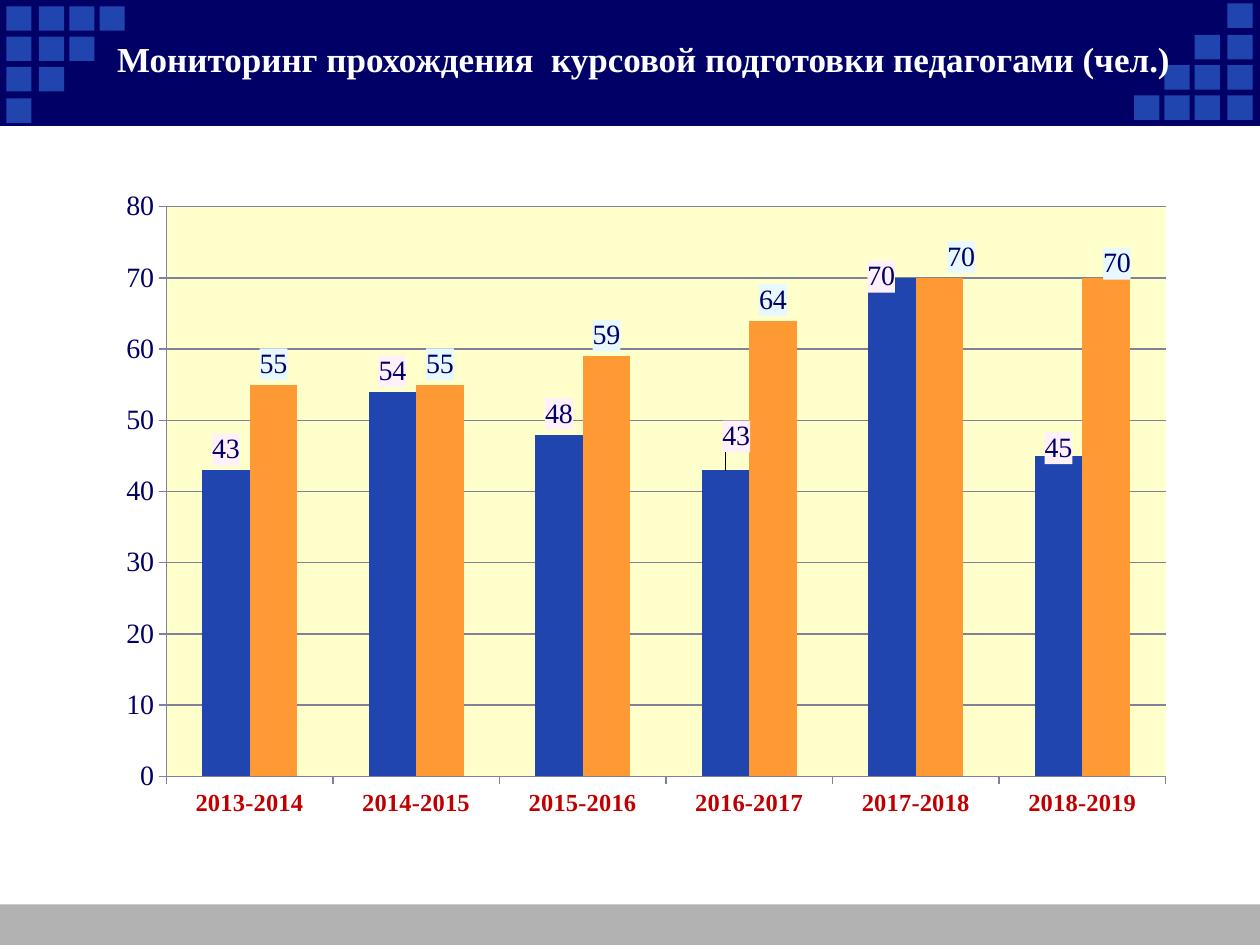
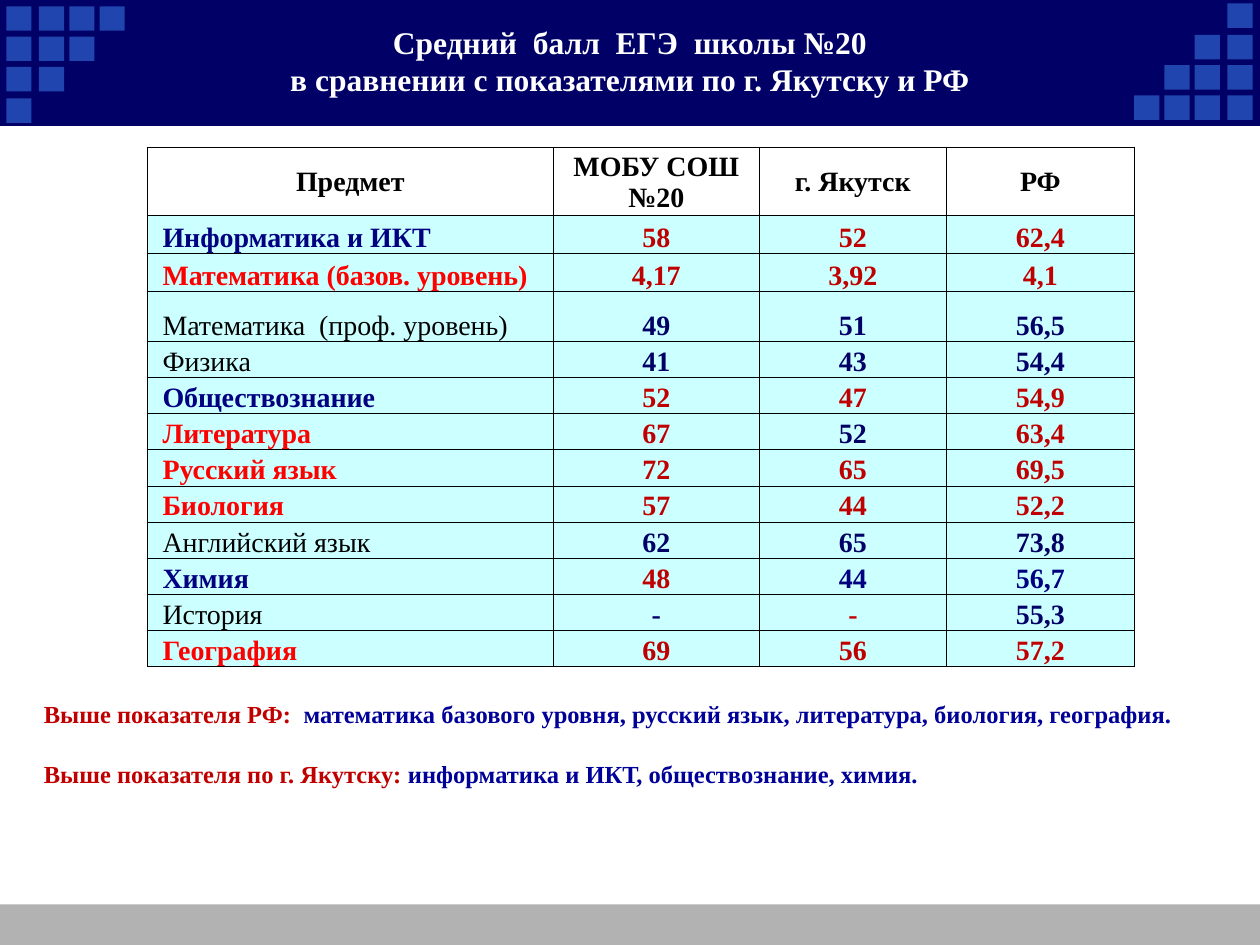
from lxml import etree
from pptx import Presentation
from pptx.chart.data import CategoryChartData
from pptx.dml.color import RGBColor
from pptx.enum import chart as ch, shapes, text
from pptx.oxml import parse_xml
from pptx.oxml.ns import nsdecls, qn
from pptx.util import Pt

NAVY = RGBColor(0x00, 0x00, 0x66)
BLUE = RGBColor(0x20, 0x45, 0xAE)
DARK = RGBColor(0x00, 0x00, 0x80)
INK = RGBColor(0x00, 0x00, 0x99)
GRAY = RGBColor(0xB2, 0xB2, 0xB2)
LINE = RGBColor(0x80, 0x80, 0x99)
WHITE = RGBColor(0xFF, 0xFF, 0xFF)
BLACK = RGBColor(0x00, 0x00, 0x00)
WINE = RGBColor(0xC0, 0x00, 0x00)
RED = RGBColor(0xFF, 0x00, 0x00)
AQUA = RGBColor(0xCC, 0xFF, 0xFF)
CREAM = RGBColor(0xFF, 0xFF, 0xCC)
AMBER = RGBColor(0xFF, 0x99, 0x33)
PINK = RGBColor(0xFF, 0xF0, 0xFA)
SKY = RGBColor(0xE8, 0xF8, 0xFF)


def style(font, size, color=None, bold=True):
    font.name, font.size, font.bold = "Times New Roman", Pt(size), bold
    if color is not None:
        font.color.rgb = color


def add_text(slide, box, lines, size, align, wrap=True):
    """Each line is a list of (words, colour) runs."""
    frame = slide.shapes.add_textbox(*map(Pt, box)).text_frame
    frame.word_wrap = wrap
    for i, line in enumerate(lines):
        para = frame.add_paragraph() if i else frame.paragraphs[0]
        para.alignment = align
        style(para.font, size)
        for words, color in line:
            run = para.add_run()
            run.text = words
            run.font.color.rgb = color
    return frame


prs = Presentation()
prs.slide_width, prs.slide_height = Pt(720), Pt(540)
blank = prs.slide_layouts[6]
LEFT, MID = text.PP_ALIGN.LEFT, text.PP_ALIGN.CENTER

# Shared bands and corner squares, kept on the layout
for holder in list(blank.placeholders):
    holder.element.getparent().remove(holder.element)
first = prs.slides.add_slide(blank)
rects = [(0, 516.8, 720, 23.2, GRAY), (0, 0, 720, 72, NAVY)]
cols, rows = (3.6, 22.3, 39.6, 56.9), (3.6, 20.9, 38.2, 56.2)
for r, y in enumerate(rows):
    for x in cols[:4 - r]:
        rects.append((x, y, 14.4, 14, BLUE))
        rects.append((705 - x, 58.2 - y, 14.4, 14, BLUE))
for *box, color in rects:
    rect = first.shapes.add_shape(shapes.MSO_SHAPE.RECTANGLE, *map(Pt, box))
    rect.shadow.inherit = False
    rect.fill.solid()
    rect.fill.fore_color.rgb = color
    rect.line.fill.background()
for rect in list(first.shapes):
    blank.shapes.element.append(rect.element)

# Slide 1: title and column chart
add_text(first, (59.8, 18, 624, 32),
         [[("Мониторинг прохождения  курсовой подготовки педагогами (чел.)", WHITE)]],
         20, LEFT)
data = CategoryChartData()
data.categories = [f"{year}-{year + 1}" for year in range(2013, 2019)]
data.add_series("Series 1", (43, 54, 48, 43, 70, 45))
data.add_series("Series 2", (55, 55, 59, 64, 70, 70))
chart = first.shapes.add_chart(
    ch.XL_CHART_TYPE.COLUMN_CLUSTERED, Pt(59.8), Pt(102.2), Pt(618), Pt(372), data).chart
chart.has_legend = chart.has_title = False
chart.font.name, chart.font.size, chart.font.color.rgb = "Arial", Pt(18), NAVY

# Axes
years, people = chart.category_axis, chart.value_axis
style(years.tick_labels.font, 14, WINE)
style(people.tick_labels.font, 16, NAVY, False)
people.minimum_scale, people.maximum_scale, people.major_unit = 0, 80, 10
people.has_major_gridlines = True
for axis in (years, people):
    axis.major_tick_mark = ch.XL_TICK_MARK.OUTSIDE
for item in (years, people, people.major_gridlines):
    item.format.line.color.rgb = LINE
    item.format.line.width = Pt(0.75)

# Plot area: fixed place and fill
plot = chart.plots[0]
plot.gap_width, plot.overlap, plot.vary_by_categories = 150, 0, False
area = chart.element.find(".//" + qn("c:plotArea"))
for old in area.findall(qn("c:layout")):
    area.remove(old)
area.insert(0, parse_xml(
    f'<c:layout {nsdecls("c")}><c:manualLayout><c:layoutTarget val="inner"/>'
    '<c:xMode val="edge"/><c:yMode val="edge"/><c:x val="0.057"/><c:y val="0.043"/>'
    '<c:w val="0.924"/><c:h val="0.875"/></c:manualLayout></c:layout>'))
area.append(parse_xml(
    f'<c:spPr {nsdecls("c", "a")}><a:solidFill><a:srgbClr val="{CREAM}"/>'
    '</a:solidFill></c:spPr>'))

# Series and labels; shifts are parts of the chart's width and height
shifts = ({3: (0.01, -0.02), 4: (-0.01, 0.03), 5: (0, 0.02)},
          {4: (0.02, 0), 5: (0.01, 0.01)})
for bars, color, tint, moves in zip(plot.series, (BLUE, AMBER), (PINK, SKY), shifts):
    bars.format.fill.solid()
    bars.format.fill.fore_color.rgb = color
    bars.invert_if_negative = False
    labels = bars.data_labels
    labels.show_value = True
    for label in [labels] + [bars.points[i].data_label for i in moves]:
        label.position = ch.XL_LABEL_POSITION.OUTSIDE_END
        style(label.font, 16, NAVY, False)
    tree = chart.element.findall(".//" + qn("c:ser"))[bars.index].find(qn("c:dLbls"))
    for node in [tree] + tree.findall(qn("c:dLbl")):
        node.find(qn("c:txPr")).addprevious(parse_xml(
            f'<c:spPr {nsdecls("c", "a")}><a:solidFill><a:srgbClr val="{tint}"/>'
            '</a:solidFill></c:spPr>'))
    for node in tree.findall(qn("c:dLbl")):
        index = node.find(qn("c:idx"))
        dx, dy = moves[int(index.get("val"))]
        index.addnext(parse_xml(
            f'<c:layout {nsdecls("c")}><c:manualLayout><c:x val="{dx}"/>'
            f'<c:y val="{dy}"/></c:manualLayout></c:layout>'))

# Slide 2: title
second = prs.slides.add_slide(blank)
add_text(second, (36, 9.4, 648, 51),
         [[("Средний  балл  ЕГЭ  школы №20", WHITE)],
          [("в сравнении с показателями по г. Якутску и РФ", WHITE)]], 18, MID)

# Score table: subject, its colour, scores, their colours
scores = [
    ("Предмет", BLACK, ("МОБУ СОШ №20", "г. Якутск", "РФ"), [BLACK] * 3),
    ("Информатика и ИКТ", DARK, ("58", "52", "62,4"), [WINE] * 3),
    ("Математика (базов. уровень)", RED, ("4,17", "3,92", "4,1"), [WINE] * 3),
    ("Математика  (проф. уровень)", BLACK, ("49", "51", "56,5"), [NAVY] * 3),
    ("Физика", BLACK, ("41", "43", "54,4"), [NAVY] * 3),
    ("Обществознание", DARK, ("52", "47", "54,9"), [WINE] * 3),
    ("Литература", RED, ("67", "52", "63,4"), [WINE, NAVY, WINE]),
    ("Русский язык", RED, ("72", "65", "69,5"), [WINE] * 3),
    ("Биология", RED, ("57", "44", "52,2"), [WINE] * 3),
    ("Английский язык", BLACK, ("62", "65", "73,8"), [NAVY] * 3),
    ("Химия", DARK, ("48", "44", "56,7"), [WINE, DARK, DARK]),
    ("История", BLACK, ("-", "-", "55,3"), [NAVY, WINE, NAVY]),
    ("География", RED, ("69", "56", "57,2"), [WINE] * 3),
]
table = second.shapes.add_table(
    len(scores), 4, Pt(84.2), Pt(84.2), Pt(564), Pt(297)).table
table.first_row = table.horz_banding = False
for col, width in zip(table.columns, (232, 117.7, 107, 107.3)):
    col.width = Pt(width)
for row, height in zip(table.rows, [38.9, 21.7, 21.7, 28.5] + [20.65] * 9):
    row.height = Pt(height)
for r, (name, color, marks, tints) in enumerate(scores):
    for c, (words, tint) in enumerate(zip((name, *marks), (color, *tints))):
        cell = table.cell(r, c)
        head, topic = r == 0, r > 0 and c == 0
        cell.margin_left = Pt(8.7 if topic else 0.7)
        cell.margin_right = cell.margin_top = Pt(0.7)
        cell.margin_bottom = 0
        cell.vertical_anchor = text.MSO_ANCHOR.MIDDLE if head else text.MSO_ANCHOR.BOTTOM
        cell.text = words
        para = cell.text_frame.paragraphs[0]
        para.alignment = LEFT if topic else MID
        style(para.font, 16, tint, not (topic and color == BLACK))
        props = cell._tc.get_or_add_tcPr()
        for side in ("lnL", "lnR", "lnT", "lnB"):
            edge = etree.SubElement(props, qn("a:" + side), w=str(Pt(0.5)))
            fill = etree.SubElement(edge, qn("a:solidFill"))
            etree.SubElement(fill, qn("a:srgbClr"), val=str(BLACK))
        if head:
            cell.fill.background()
        else:
            cell.fill.solid()
            cell.fill.fore_color.rgb = AQUA

# Conclusions under the table
notes = add_text(second, (18, 396, 664.6, 58), [
    [("Выше показателя РФ:  ", WINE),
     ("математика базового уровня, русский язык, литература, биология, география.", INK)],
    [("Выше показателя по г. Якутску: ", WINE),
     ("информатика и ИКТ, обществознание, химия.", INK)]], 14, LEFT, False)
notes.paragraphs[1].space_before = Pt(17.5)

prs.save("out.pptx")
